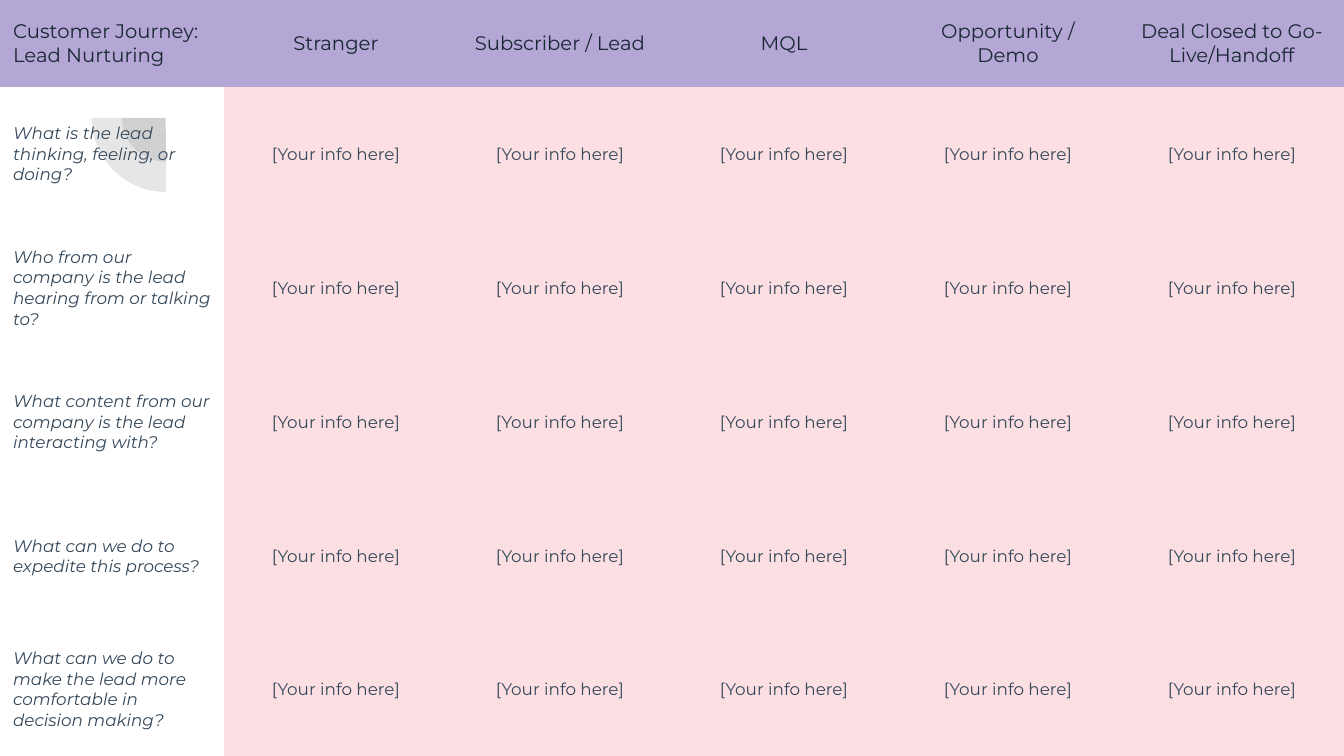
from lxml.etree import SubElement
from pptx import Presentation
from pptx.dml.color import RGBColor
from pptx.enum.shapes import MSO_SHAPE as Shape
from pptx.enum.text import MSO_ANCHOR as Anchor, PP_ALIGN as Align
from pptx.oxml import parse_xml
from pptx.oxml.ns import nsdecls, qn
from pptx.util import Inches, Pt

LAVENDER = RGBColor(0xB4, 0xA7, 0xD6)
PINK = RGBColor(0xFB, 0xC0, 0xC6)
GREY = RGBColor(0x42, 0x42, 0x42)
NAVY = RGBColor(0x19, 0x27, 0x33)
SLATE = RGBColor(0x34, 0x48, 0x5A)

STAGES = ["Customer Journey: Lead Nurturing", "Stranger", "Subscriber / Lead",
          "MQL", "Opportunity / Demo", "Deal Closed to Go-Live/Handoff"]
QUESTIONS = [
    "What is the lead\nthinking, feeling, or doing?",
    "Who from our company is the lead hearing from or talking to?",
    "What content from our company is the lead interacting with?",
    "What can we do to expedite this process?",
    "What can we do to make the lead more comfortable in decision making?",
]
ANSWER = "[Your info here]"


class JourneySlide:
    """Holds the style and the slide; lengths are in grid columns and rows."""
    font = "Montserrat"
    inset = Inches(0.13)
    header_rows = 0.65

    def __init__(self, deck):
        self.slide = deck.slides.add_slide(deck.slide_layouts[6])
        self.width, self.height = deck.slide_width, deck.slide_height
        self.column = self.width // len(STAGES)
        self.row = Inches(1.33)

    def paint(self, fill, color, opacity=100):
        fill.solid()
        fill.fore_color.rgb = color
        if opacity < 100:
            # The colour element is reached through the public XML tree
            return {"val": str(opacity * 1000)}
        return None

    def fade(self, element, opacity):
        color = element.find(f"{qn('a:solidFill')}/{qn('a:srgbClr')}")
        SubElement(color, qn("a:alpha"), val=str(opacity * 1000))

    def quarter(self, center_column, center_row, diameter):
        size = int(diameter * self.column)
        left = int(center_column * self.column - size / 2)
        top = int(center_row * self.row - size / 2)
        pie = self.slide.shapes.add_shape(Shape.PIE, left, top, size, size)
        pie.adjustments[0], pie.adjustments[1] = 107.93, 162
        pie.rotation = 270
        pie.shadow.inherit = False
        pie.line.fill.background()
        self.paint(pie.fill, GREY)
        self.fade(pie._element.spPr, 13)

    def grid(self, rows):
        table = self.slide.shapes.add_table(
            len(rows), len(rows[0]), 0, 0, self.width, self.height).table
        table.first_row = table.horz_banding = False
        for column in table.columns:
            column.width = self.column
        header = int(self.header_rows * self.row)
        heights = [header] + [self.row] * (len(rows) - 2)
        heights.append(self.height - sum(heights))
        for r, (texts, height) in enumerate(zip(rows, heights)):
            table.rows[r].height = height
            for c, text in enumerate(texts):
                self.cell(table.cell(r, c), text, heading=r == 0, label=c == 0)

    def cell(self, cell, text, heading, label):
        cell.text_frame.text = text
        cell.vertical_anchor = Anchor.MIDDLE
        cell.margin_left = cell.margin_right = self.inset
        cell.margin_top = cell.margin_bottom = self.inset
        for paragraph in cell.text_frame.paragraphs:
            paragraph.alignment = Align.LEFT if label else Align.CENTER
            for run in paragraph.runs:
                run.font.name = self.font
                run.font.size = Pt(14 if heading else 12)
                run.font.italic = label and not heading
                run.font.color.rgb = NAVY if heading else SLATE

        # Fill, then borders ahead of it
        properties = cell._tc.get_or_add_tcPr()
        if heading:
            self.paint(cell.fill, LAVENDER)
        elif label:
            cell.fill.background()
        else:
            self.paint(cell.fill, PINK)
            self.fade(properties, 50)
        for place, side in enumerate("LRTB"):
            properties.insert(place, parse_xml(
                f"<a:ln{side} {nsdecls('a')}><a:noFill/></a:ln{side}>"))


def main():
    deck = Presentation()
    deck.slide_width, deck.slide_height = Inches(13.33), Inches(7.5)
    journey = JourneySlide(deck)

    # Two quarter discs around one centre, behind the table
    for diameter in (0.39, 0.66):
        journey.quarter(0.74, 0.88, diameter)

    # Stages across, questions down
    answers = [ANSWER] * (len(STAGES) - 1)
    journey.grid([STAGES] + [[question] + answers for question in QUESTIONS])

    deck.save("out.pptx")


if __name__ == "__main__":
    main()
